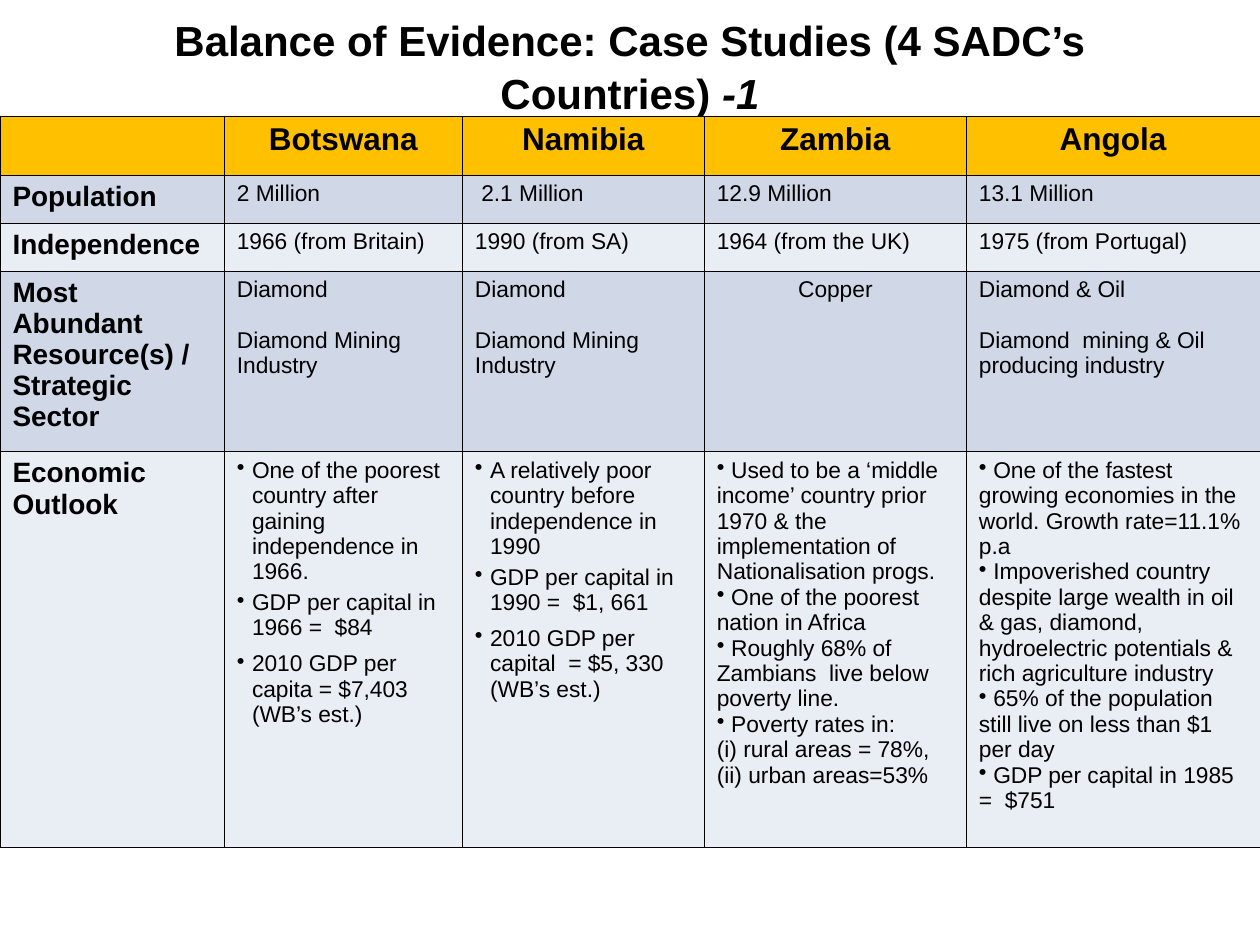
from dataclasses import dataclass

from lxml import etree
from pptx import Presentation
from pptx.dml.color import RGBColor
from pptx.enum.text import MSO_ANCHOR, PP_ALIGN
from pptx.oxml.ns import qn
from pptx.util import Inches, Pt

CENTER, LEFT = PP_ALIGN.CENTER, PP_ALIGN.LEFT
MIDDLE = MSO_ANCHOR.MIDDLE


@dataclass(frozen=True)
class Theme:
    font: str = "Arial"
    ink: str = "000000"
    gold: str = "FFC000"
    bands: tuple = ("D0D8E8", "E9EDF4")
    title: int = 24
    head: int = 18
    label: int = 16
    body: int = 13
    rule: float = 0.25


@dataclass(frozen=True)
class Para:
    """How the paragraphs of a cell are set."""
    size: int
    bold: bool = False
    align: int = LEFT
    bullet: bool = False
    hang: float = 0
    before: float = 0
    after: float = 0


class Deck:
    def __init__(self, theme):
        self.theme = theme
        self.file = Presentation()
        self.file.slide_width, self.file.slide_height = Inches(10), Inches(7.5)
        self.slide = self.file.slides.add_slide(self.file.slide_layouts[6])

    def wide(self, share):
        return round(self.file.slide_width * share)

    def high(self, share):
        return round(self.file.slide_height * share)

    def style(self, para, size, bold):
        font = para.font
        font.name, font.size, font.bold = self.theme.font, Pt(size), bold
        font.color.rgb = RGBColor.from_string(self.theme.ink)

    def title(self, text, tail, left, top, width, height):
        box = self.slide.shapes.add_textbox(
            self.wide(left), self.high(top), self.wide(width), self.high(height))
        frame = box.text_frame
        frame.word_wrap, frame.vertical_anchor = True, MIDDLE
        para = frame.paragraphs[0]
        para.alignment, para.line_spacing = CENTER, 1.05
        self.style(para, self.theme.title, True)
        para.add_run().text = text
        end = para.add_run()
        end.text, end.font.italic = tail, True

    def table(self, left, top, cols, rows):
        grid = self.slide.shapes.add_table(
            len(rows), len(cols), self.wide(left), self.high(top),
            self.wide(sum(cols)), self.high(sum(rows))).table
        grid.horz_banding = False
        for col, share in zip(grid.columns, cols):
            col.width = self.wide(share)
        for row, share in zip(grid.rows, rows):
            row.height = self.high(share)
        return grid

    def cell(self, cell, lines, look, fill):
        cell.fill.solid()
        cell.fill.fore_color.rgb = RGBColor.from_string(fill)
        self.border(cell)
        for i, line in enumerate(lines):
            frame = cell.text_frame
            para = frame.add_paragraph() if i else frame.paragraphs[0]
            para.text, para.alignment = line, look.align
            # A line that starts with a roman numeral carries no bullet
            if look.bullet and not line.startswith("("):
                self.bullet(para, look.hang)
            if i:
                para.space_before, para.space_after = Pt(look.before), Pt(look.after)
            self.style(para, look.size, look.bold)

    def bullet(self, para, hang):
        props = para._p.get_or_add_pPr()
        props.set("marL", str(Inches(hang)))
        props.set("indent", str(-Inches(hang)))
        etree.SubElement(props, qn("a:buChar")).set("char", "•")

    def border(self, cell):
        props = cell._tc.get_or_add_tcPr()
        for i, side in enumerate(("a:lnL", "a:lnR", "a:lnT", "a:lnB")):
            line = etree.Element(qn(side), w=str(Pt(self.theme.rule)))
            fill = etree.SubElement(line, qn("a:solidFill"))
            etree.SubElement(fill, qn("a:srgbClr")).set("val", self.theme.ink)
            props.insert(i, line)

    def save(self):
        self.file.save("out.pptx")


COLS = (0.178, 0.189, 0.192, 0.208, 0.233)
ROWS = [inch / 7.5 for inch in (0.47, 0.38, 0.38, 0.94, 2.7)]

HEADS = ("", "Botswana", "Namibia", "Zambia", "Angola")
FACTS = (
    ("Population", "2 Million", " 2.1 Million", "12.9 Million", "13.1 Million"),
    ("Independence", "1966 (from Britain)", "1990 (from SA)",
     "1964 (from the UK)", "1975 (from Portugal)"),
)
SECTORS = (
    ("Most Abundant Resource(s) / Strategic Sector",),
    ("Diamond", "Diamond Mining Industry"),
    ("Diamond", "Diamond Mining Industry"),
    ("Copper",),
    ("Diamond & Oil", "Diamond  mining & Oil producing industry"),
)
OUTLOOK = (
    ("Economic Outlook",),
    ("One of the poorest country after gaining independence in 1966.",
     "GDP per capital in 1966 =  $84",
     "2010 GDP per capita = $7,403 (WB’s est.)"),
    ("A relatively poor country before independence in 1990",
     "GDP per capital in 1990 =  $1, 661",
     "2010 GDP per capital  = $5, 330 (WB’s est.)"),
    (" Used to be a ‘middle income’ country prior 1970 & the implementation "
     "of Nationalisation progs.",
     " One of the poorest nation in Africa",
     " Roughly 68% of Zambians  live below poverty line.",
     " Poverty rates in:",
     "(i) rural areas = 78%, (ii) urban areas=53%"),
    (" One of the fastest growing economies in the world. Growth rate=11.1% p.a",
     " Impoverished country despite large wealth in oil & gas, diamond, "
     "hydroelectric potentials & rich agriculture industry",
     " 65% of the population still live on less than $1 per day",
     " GDP per capital in 1985 =  $751"),
)


def main():
    theme = Theme()
    deck = Deck(theme)
    head = Para(theme.head, True, CENTER)
    label = Para(theme.label, True)
    plain = Para(theme.body)
    apart = Para(theme.body, before=14.5)
    mid = Para(theme.body, align=CENTER)
    hung = Para(theme.body, bullet=True, hang=0.12, before=3, after=3)
    flush = Para(theme.body, bullet=True)

    # Title
    deck.title("Balance of Evidence: Case Studies (4 SADC’s Countries) ", "-1",
               0.05, 0.25 / 7.5, 0.9, 0.53 / 7.5)

    # Country table: one list of cells and one list of looks per row
    facts = [[(text,) for text in row] for row in FACTS]
    heads = [(text,) if text else () for text in HEADS]
    cells = [heads, *facts, SECTORS, OUTLOOK]
    looks = [
        [head] * 5,
        [label] + [plain] * 4,
        [label] + [plain] * 4,
        [label, apart, apart, mid, apart],
        [label, hung, hung, flush, flush],
    ]
    grid = deck.table(0, 0.92 / 7.5, COLS, ROWS)
    for r, (row, kinds) in enumerate(zip(cells, looks)):
        fill = theme.bands[(r - 1) % 2] if r else theme.gold
        for c, (lines, look) in enumerate(zip(row, kinds)):
            deck.cell(grid.cell(r, c), lines, look, fill)

    deck.save()


if __name__ == "__main__":
    main()
